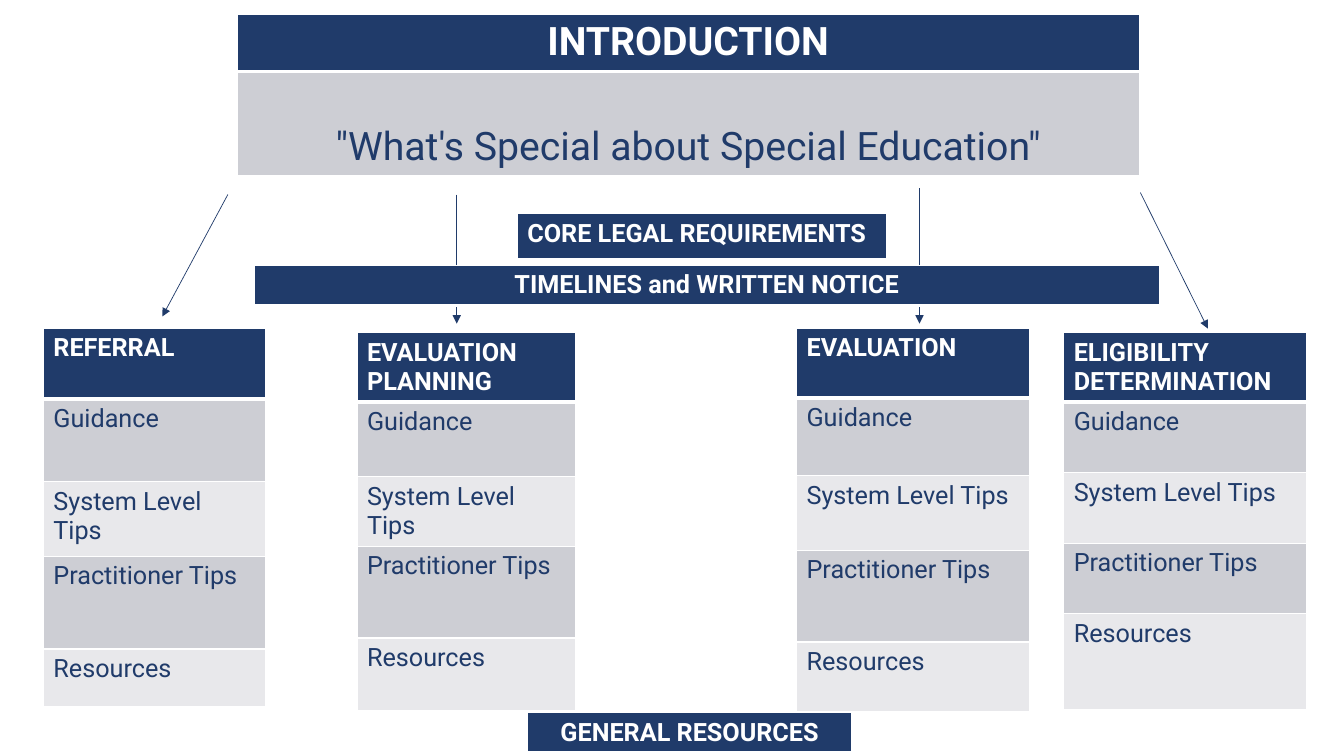
from dataclasses import dataclass

from lxml.etree import SubElement
from pptx import Presentation
from pptx.dml.color import RGBColor
from pptx.enum.shapes import MSO_CONNECTOR as CONN
from pptx.enum.text import MSO_ANCHOR as ANCHOR, PP_ALIGN as ALIGN
from pptx.oxml.ns import qn
from pptx.slide import Slide
from pptx.table import _Cell as Cell
from pptx.util import Inches, Pt

NAVY = RGBColor(0x20, 0x3B, 0x6A)
WHITE = RGBColor(0xFF, 0xFF, 0xFF)
GREY = RGBColor(0xCD, 0xCE, 0xD4)
PALE = RGBColor(0xE8, 0xE8, 0xEB)
FONT = "Roboto"
TOPICS = ("Guidance", "System Level Tips", "Practitioner Tips", "Resources")


@dataclass
class Panel:
    left: float
    top: float
    width: float
    heights: tuple[float, ...]
    texts: tuple[str, ...]
    size: int = 18
    align: ALIGN = ALIGN.LEFT
    body_anchor: ANCHOR = ANCHOR.TOP


@dataclass
class Arrow:
    x1: float
    y1: float
    x2: float
    y2: float


PANELS = (
    Panel(2.35, 0.14, 8.95, (0.57, 1.03),
          ("INTRODUCTION", "\"What's Special about Special Education\""),
          28, ALIGN.CENTER, ANCHOR.BOTTOM),
    Panel(5.13, 2.12, 3.66, (0.46,), ("CORE LEGAL REQUIREMENTS",)),
    Panel(2.52, 2.63, 8.98, (0.4,), ("TIMELINES and WRITTEN NOTICE",), align=ALIGN.CENTER),
    Panel(0.43, 3.26, 2.2, (0.7, 0.82, 0.74, 0.92, 0.57), ("REFERRAL", *TOPICS)),
    Panel(3.54, 3.3, 2.17, (0.69, 0.74, 0.69, 0.91, 0.72), ("EVALUATION PLANNING", *TOPICS)),
    Panel(7.9, 3.26, 2.31, (0.69, 0.77, 0.74, 0.91, 0.69), ("EVALUATION", *TOPICS)),
    Panel(10.55, 3.3, 2.41, (0.69, 0.7, 0.7, 0.7, 0.95),
          ("ELIGIBILITY DETERMINATION", *TOPICS)),
    Panel(5.23, 7.07, 3.22, (0.4,), ("GENERAL RESOURCES",), align=ALIGN.CENTER),
)
ARROWS = (
    Arrow(2.26, 1.93, 1.61, 3.14),
    Arrow(4.53, 1.93, 4.53, 3.21),
    Arrow(9.12, 1.87, 9.12, 3.21),
    Arrow(11.31, 1.91, 11.98, 3.26),
)


def set_borders(cell: Cell, bottom: float) -> None:
    tc_pr = cell._tc.get_or_add_tcPr()
    for side, width in (("lnL", 1), ("lnR", 1), ("lnT", 1), ("lnB", bottom)):
        ln = SubElement(tc_pr, qn(f"a:{side}"), w=str(Pt(width)))
        fill = SubElement(ln, qn("a:solidFill"))
        SubElement(fill, qn("a:srgbClr"), val=str(WHITE))


def write_text(cell: Cell, text: str, *, size: int, color: RGBColor,
               bold: bool, align: ALIGN) -> None:
    p = cell.text_frame.paragraphs[0]
    p.alignment = align
    r = p.add_run()
    r.text = text
    r.font.name = FONT
    r.font.size = Pt(size)
    r.font.bold = bold
    r.font.color.rgb = color


def add_panel(s: Slide, panel: Panel) -> None:
    table = s.shapes.add_table(
        len(panel.texts), 1, Inches(panel.left), Inches(panel.top),
        Inches(panel.width), Inches(sum(panel.heights))).table
    table.first_row = False
    table.horz_banding = False
    for i, (height, text) in enumerate(zip(panel.heights, panel.texts)):
        header = i == 0
        table.rows[i].height = Inches(height)
        cell = table.cell(i, 0)
        set_borders(cell, 3 if header else 1)
        cell.fill.solid()
        cell.fill.fore_color.rgb = NAVY if header else GREY if i % 2 else PALE
        cell.vertical_anchor = ANCHOR.TOP if header else panel.body_anchor
        write_text(cell, text, size=panel.size, color=WHITE if header else NAVY,
                   bold=header, align=panel.align)


def add_arrow(s: Slide, arrow: Arrow) -> None:
    line = s.shapes.add_connector(
        CONN.STRAIGHT, Inches(arrow.x1), Inches(arrow.y1),
        Inches(arrow.x2), Inches(arrow.y2))
    line.line.color.rgb = NAVY
    line.line.width = Pt(0.5)
    SubElement(line.line._get_or_add_ln(), qn("a:tailEnd"), type="triangle")
    SubElement(line._element.spPr, qn("a:effectLst"))


def main() -> None:
    prs = Presentation()
    prs.slide_width = Inches(13.33)
    prs.slide_height = Inches(7.5)
    s = prs.slides.add_slide(prs.slide_layouts[6])
    for arrow in ARROWS:
        add_arrow(s, arrow)
    for panel in PANELS:
        add_panel(s, panel)
    prs.save("out.pptx")


if __name__ == "__main__":
    main()
